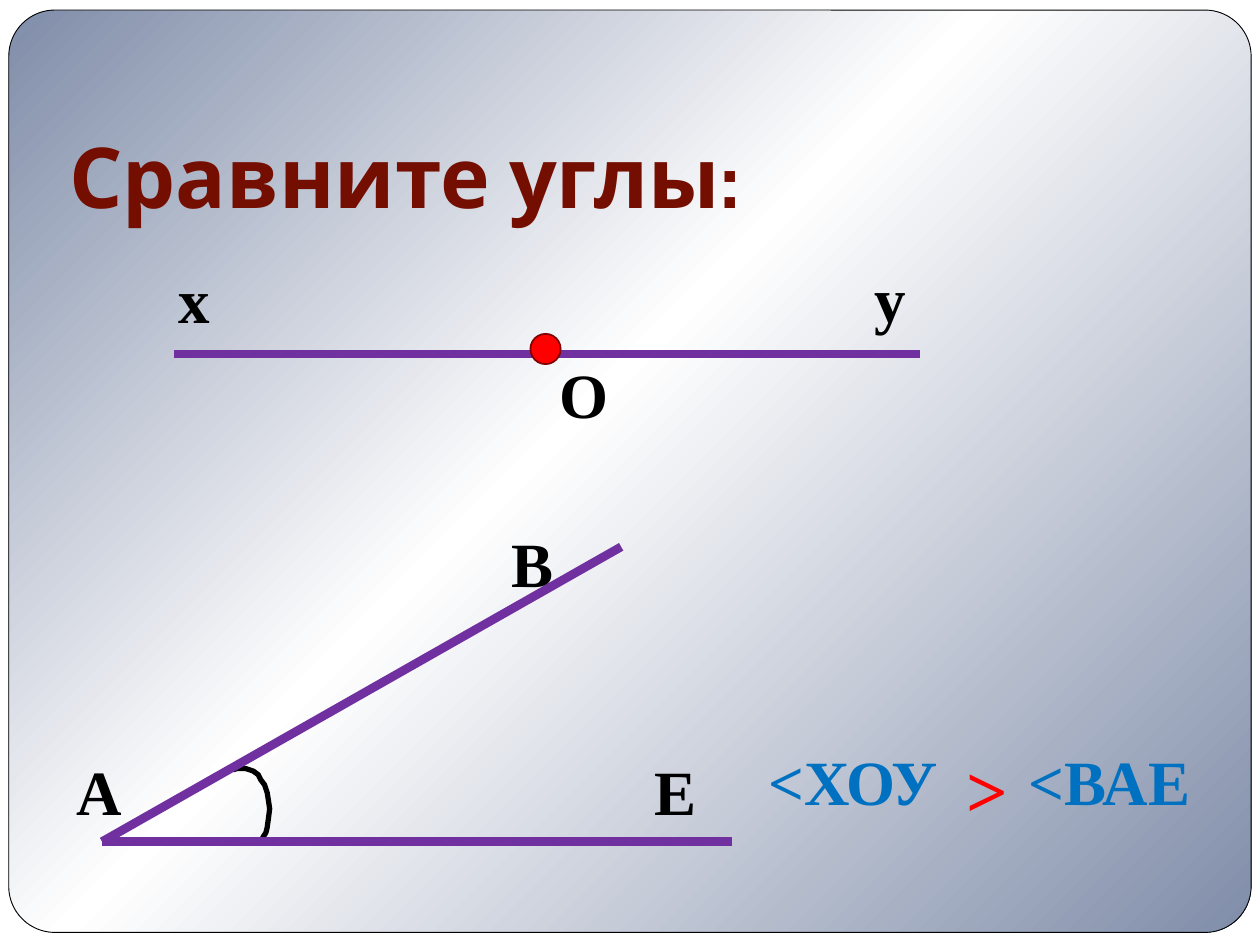
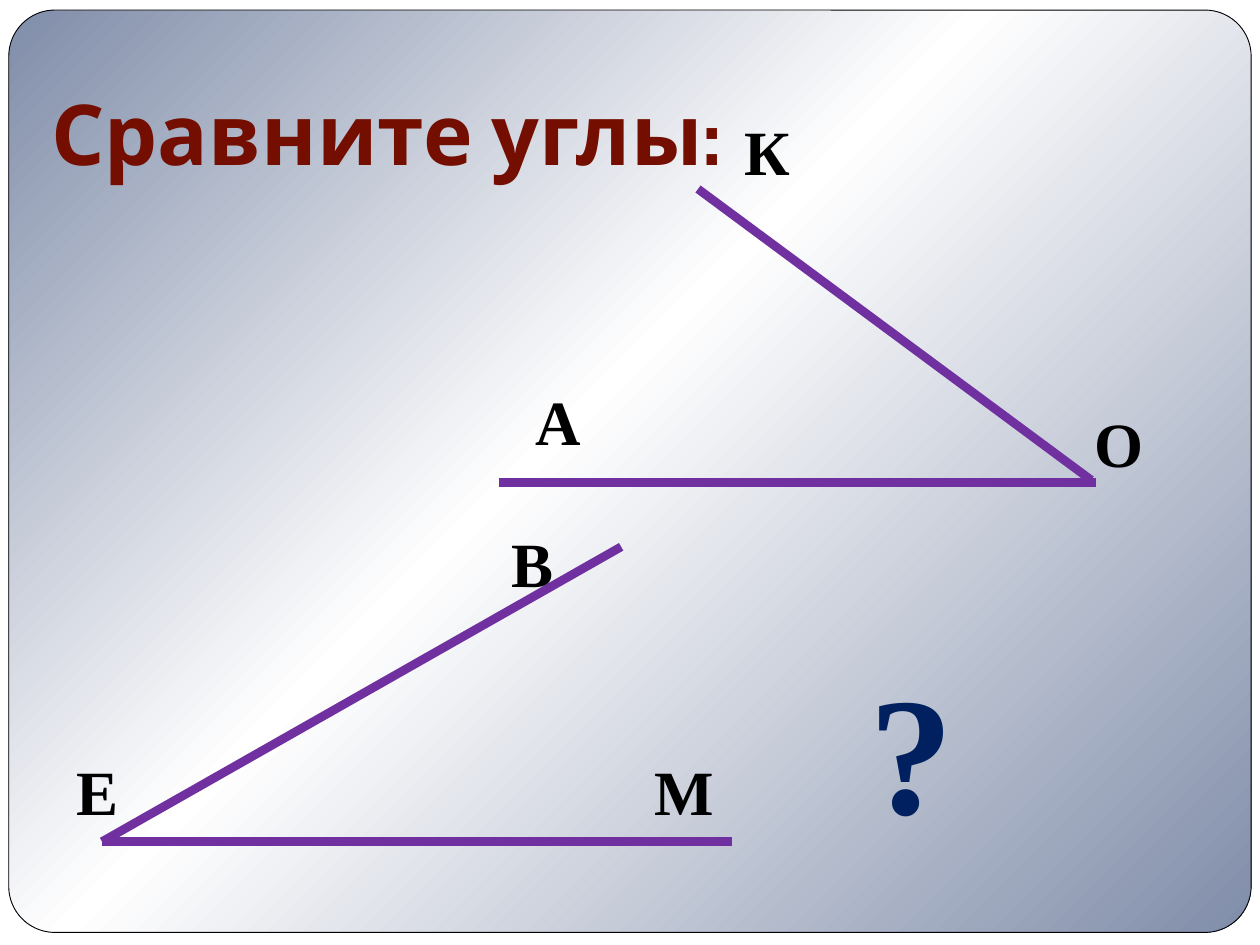
import pptx
import pptx.dml.color
import pptx.enum.shapes
import pptx.enum.text
import pptx.oxml
import pptx.oxml.ns
import pptx.util

PX = 9144  # EMU per px, 100 px to the inch
SLIDE_SIZE = (1000, 750)
SERIF = "Times New Roman"
TITLE_FONT = "Cabin"
COLORS = {
    "paper": "FFFFFF",
    "edge": "808DA9",
    "title": "730E00",
    "ink": "000000",
    "ray": "7030A0",
    "angle_name": "0070C0",
    "sign": "FF0000",
    "point_rim": "800101",
    "question": "002060",
}
GRADIENT_STOPS = [(0, "edge"), (45, "paper"), (100, "edge")]
ARC = [(185, 611), (188, 610), (195, 610), (201, 612), (205, 615),
       (207, 619), (210, 623), (212, 629), (213, 635), (214, 642),
       (213, 650), (212, 657), (211, 661), (209, 664), (208, 666)]


def px(value):
    return pptx.util.Emu(value * PX)


def color(name):
    return pptx.dml.color.RGBColor.from_string(COLORS[name])


def set_line(line, color_name, width):
    line.color.rgb = color(color_name)
    line.width = pptx.util.Pt(width)


def style(font, size, color_name, name=SERIF):
    font.size = pptx.util.Pt(size)
    font.name = name
    font.bold = True
    font.color.rgb = color(color_name)


# Shared frame: white margin, gradient card with rounded corners
def gradient_fill():
    stops = "".join(
        f'<a:gs pos="{pos * 1000}"><a:srgbClr val="{COLORS[name]}"/></a:gs>'
        for pos, name in GRADIENT_STOPS)
    return pptx.oxml.parse_xml(
        f'<a:gradFill {pptx.oxml.ns.nsdecls("a")} rotWithShape="1">'
        f'<a:gsLst>{stops}</a:gsLst><a:lin ang="2700000" scaled="0"/></a:gradFill>')


def add_card(slide):
    slide.background.fill.solid()
    slide.background.fill.fore_color.rgb = color("paper")
    card = slide.shapes.add_shape(
        pptx.enum.shapes.MSO_SHAPE.ROUNDED_RECTANGLE,
        px(7), px(8), px(986), px(732))
    card.adjustments[0] = 0.05
    card.shadow.inherit = False
    set_line(card.line, "ink", 0.5)
    outline = card._element.spPr.find(pptx.oxml.ns.qn("a:ln"))
    outline.addprevious(gradient_fill())


# Text
def add_text(slide, text, left, top, width, height, size, color_name, font=SERIF):
    box = slide.shapes.add_textbox(px(left), px(top), px(width), px(height))
    frame = box.text_frame
    frame.word_wrap = True
    frame.text = text
    for run in frame.paragraphs[0].runs:
        style(run.font, size, color_name, font)
    return frame


def add_title(slide, left, top):
    title = add_text(slide, "Сравните углы:", left, top, 850, 125,
                     48, "title", TITLE_FONT)
    title.vertical_anchor = pptx.enum.text.MSO_ANCHOR.BOTTOM
    title.margin_bottom = px(10)


def add_point_name(slide, letter, left, top):
    add_text(slide, letter, left, top, 87, 71, 36, "ink")


def add_comparison(slide):
    answer = add_text(slide, "", 600, 534, 400, 151, 36, "angle_name")
    paragraph = answer.paragraphs[0]
    paragraph._p.get_or_add_pPr().append(pptx.oxml.parse_xml(
        f'<a:tabLst {pptx.oxml.ns.nsdecls("a")}>'
        f'<a:tab pos="{px(157)}" algn="l"/></a:tabLst>'))
    parts = [("<ХОУ\t", 36, "angle_name"), (">", 72, "sign"),
             (" ", 48, "angle_name"), ("<ВАЕ", 36, "angle_name")]
    for text, size, color_name in parts:
        run = paragraph.add_run()
        run.text = text
        style(run.font, size, color_name)
        if color_name == "sign":
            run.font._element.set("baseline", "-10000")


# Geometry
def add_ray(slide, start, end):
    ray = slide.shapes.add_connector(
        pptx.enum.shapes.MSO_CONNECTOR.STRAIGHT,
        *(px(value) for value in (*start, *end)))
    set_line(ray.line, "ray", 5)
    ray._element.spPr.append(pptx.oxml.parse_xml(
        f'<a:effectLst {pptx.oxml.ns.nsdecls("a")}/>'))


def add_acute_angle(slide, vertex_name, base_name):
    vertex = (81, 668)
    add_ray(slide, (581, 668), vertex)
    add_ray(slide, (493, 434), vertex)
    add_point_name(slide, "В", 396, 411)
    add_point_name(slide, base_name, 510, 592)
    add_point_name(slide, vertex_name, 51, 592)


def add_angle_arc(slide):
    builder = slide.shapes.build_freeform(*ARC[0], scale=PX)
    builder.add_line_segments(ARC[1:], close=False)
    arc = builder.convert_to_shape()
    arc.fill.background()
    arc.shadow.inherit = False
    set_line(arc.line, "ink", 3)


def add_vertex_point(slide):
    point = slide.shapes.add_shape(
        pptx.enum.shapes.MSO_SHAPE.OVAL, px(421), px(265), px(24), px(24))
    point.shadow.inherit = False
    point.fill.solid()
    point.fill.fore_color.rgb = color("sign")
    set_line(point.line, "point_rim", 1)


def add_slide(deck, title_left, title_top):
    slide = deck.slides.add_slide(deck.slide_layouts[6])
    add_card(slide)
    add_title(slide, title_left, title_top)
    return slide


# Slides
def build_straight_and_acute(deck):
    slide = add_slide(deck, 45, 64)
    add_comparison(slide)
    add_ray(slide, (138, 281), (730, 281))
    for letter, left, top in [("х", 132, 202), ("О", 434, 277), ("у", 684, 201)]:
        add_point_name(slide, letter, left, top)
    add_angle_arc(slide)
    add_acute_angle(slide, "А", "Е")
    add_vertex_point(slide)


def build_two_acute(deck):
    slide = add_slide(deck, 31, 30)
    add_text(slide, "?", 680, 508, 320, 151, 96, "question")
    add_ray(slide, (396, 383), (870, 383))
    add_ray(slide, (554, 150), (866, 381))
    for letter, left, top in [("К", 581, 84), ("О", 859, 316), ("А", 415, 299)]:
        add_point_name(slide, letter, left, top)
    add_acute_angle(slide, "Е", "М")


def main():
    deck = pptx.Presentation()
    deck.slide_width, deck.slide_height = (px(side) for side in SLIDE_SIZE)
    build_straight_and_acute(deck)
    build_two_acute(deck)
    deck.save("out.pptx")


if __name__ == "__main__":
    main()
